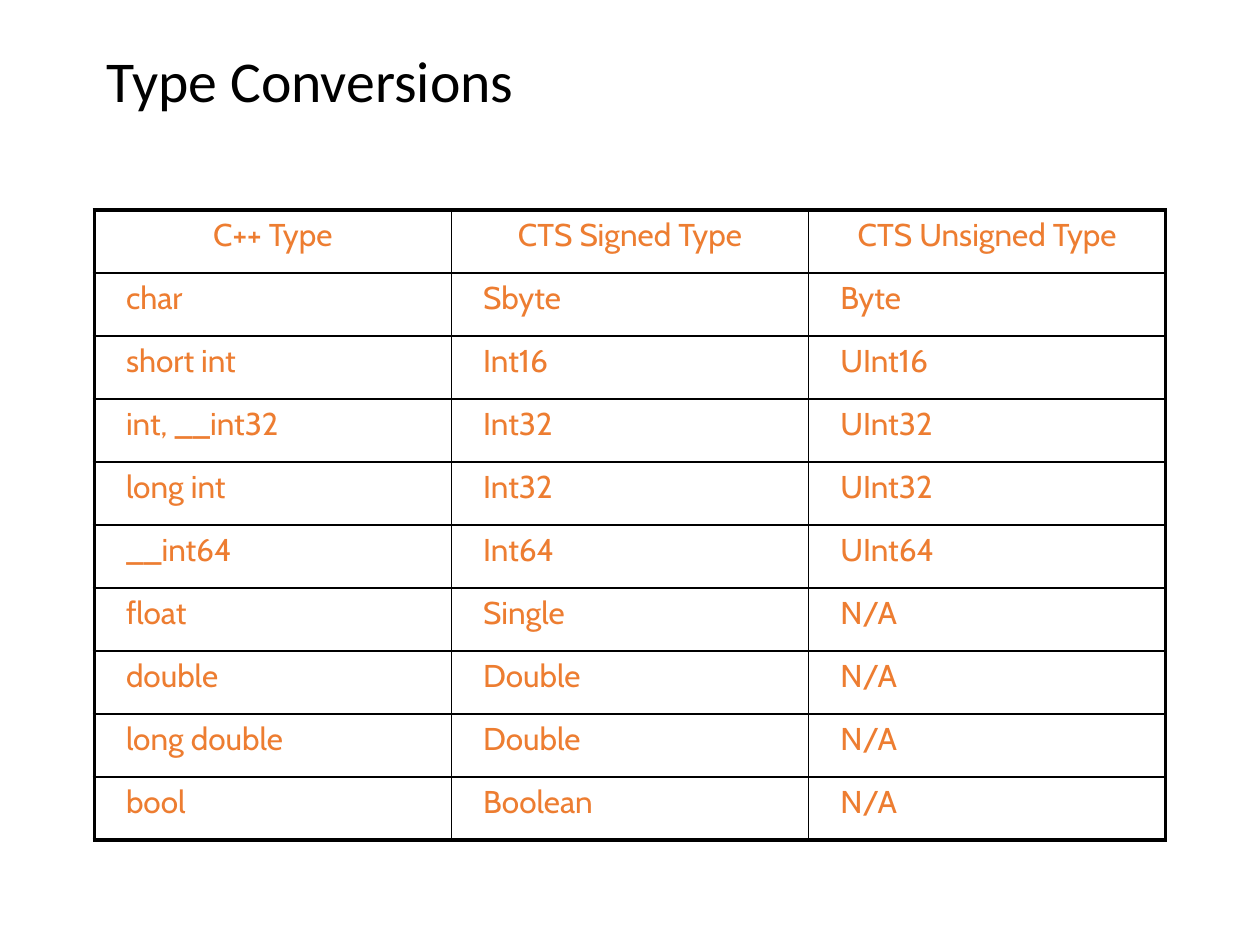
from lxml import etree
from pptx import Presentation
from pptx.dml.color import RGBColor
from pptx.enum.text import MSO_ANCHOR, PP_ALIGN
from pptx.oxml.ns import qn
from pptx.util import Cm, Pt

MIDDLE = MSO_ANCHOR.MIDDLE
CENTER, LEFT = PP_ALIGN.CENTER, PP_ALIGN.LEFT
THIN, THICK = Pt(1), Pt(2.25)

TYPES = [
    ("C++ Type", "CTS Signed Type", "CTS Unsigned Type"),
    ("char", "Sbyte", "Byte"),
    ("short int", "Int16", "UInt16"),
    ("int, __int32", "Int32", "UInt32"),
    ("long int", "Int32", "UInt32"),
    ("__int64", "Int64", "UInt64"),
    ("float", "Single", "N/A"),
    ("double", "Double", "N/A"),
    ("long double", "Double", "N/A"),
    ("bool", "Boolean", "N/A"),
]


def color(code):
    return RGBColor.from_string(code)


class Deck:
    black, accent = "000000", "ED7D31"
    head, body = "Calibri", "Cabin"

    def __init__(self, slide):
        self.slide = slide

    def add_text(self, para, text, font, size, code):
        run = para.add_run()
        run.text = text
        run.font.name = font
        run.font.size = Pt(size)
        run.font.color.rgb = color(code)

    def title(self, text, left, top, width, height):
        box = self.slide.shapes.add_textbox(Cm(left), Cm(top), Cm(width), Cm(height))
        frame = box.text_frame
        frame.word_wrap = True
        frame.vertical_anchor = MIDDLE
        para = frame.paragraphs[0]
        para.line_spacing = 0.9
        self.add_text(para, text, self.head, 33, self.black)

    def border(self, cell, sides):
        """Draw the cell's edges; sides maps L, R, T, B, in that order, to widths."""
        props = cell._tc.get_or_add_tcPr()
        for side, width in sides.items():
            line = etree.SubElement(props, qn(f"a:ln{side}"), w=str(width))
            fill = etree.SubElement(line, qn("a:solidFill"))
            etree.SubElement(fill, qn("a:srgbClr"), val=self.black)

    def table(self, data, left, top, width, height):
        rows, cols = len(data), len(data[0])
        frame = self.slide.shapes.add_table(
            rows, cols, Cm(left), Cm(top), Cm(width), Cm(height))
        grid = frame.table
        grid.first_row = grid.horz_banding = False
        for r, row in enumerate(data):
            for c, text in enumerate(row):
                cell = grid.cell(r, c)
                self.border(cell, {
                    "L": THICK if c == 0 else THIN,
                    "R": THICK if c == cols - 1 else THIN,
                    "T": THICK if r == 0 else THIN,
                    "B": THICK if r == rows - 1 else THIN,
                })
                cell.fill.background()
                if r:
                    cell.margin_left = Cm(0.64)
                para = cell.text_frame.paragraphs[0]
                para.alignment = LEFT if r else CENTER
                self.add_text(para, text, self.body, 18, self.accent)


def main():
    prs = Presentation()
    prs.slide_width, prs.slide_height = Cm(25.4), Cm(19.05)
    deck = Deck(prs.slides.add_slide(prs.slide_layouts[6]))
    deck.title("Type Conversions", 1.9, 0.64, 21.6, 2.1)
    deck.table(TYPES, 1.9, 4.23, 21.6, 12.7)
    prs.save("out.pptx")


if __name__ == "__main__":
    main()
